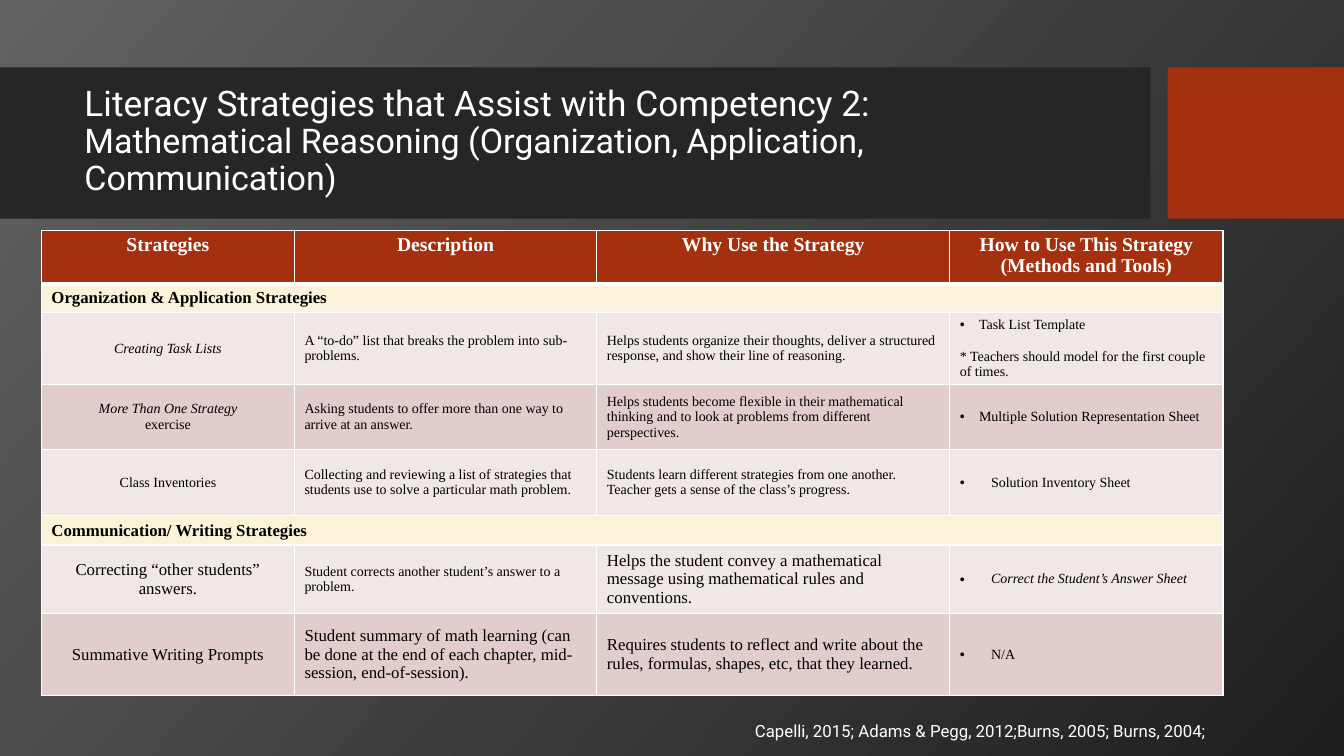
from dataclasses import dataclass

from lxml.etree import SubElement
from pptx import Presentation
from pptx.dml.color import RGBColor
from pptx.enum.shapes import MSO_SHAPE as Shape
from pptx.enum.text import MSO_ANCHOR as Anchor, PP_ALIGN as Align
from pptx.oxml.ns import qn
from pptx.util import Emu, Inches, Pt

BACKDROP_LIGHT = RGBColor(0x62, 0x62, 0x62)
BACKDROP_DARK = RGBColor(0x1F, 0x1F, 0x1F)
BAND = RGBColor(0x26, 0x26, 0x26)
RUST = RGBColor(0xA5, 0x30, 0x0F)
CREAM = RGBColor(0xFA, 0xF3, 0xD9)
PALE = RGBColor(0xF0, 0xE8, 0xE7)
ROSE = RGBColor(0xE1, 0xCD, 0xCC)
WHITE = RGBColor(0xFF, 0xFF, 0xFF)
BLACK = RGBColor(0x00, 0x00, 0x00)

SANS = "Roboto"
SERIF = "Times New Roman"

# Shares of the slide's size, in percent
COLUMN_WIDTHS = (18.83, 22.5, 26.26, 20.33)


@dataclass
class Entry:
    text: str
    size: float = 10
    bold: bool = False
    italic_first: bool = False
    bullet_indent: float = 0


@dataclass
class Row:
    height: float
    fill: RGBColor
    entries: list


HEADER = Row(6.93, RUST, [Entry(text, 14, bold=True) for text in (
    "Strategies", "Description", "Why Use the Strategy",
    "How to Use This Strategy\n(Methods and Tools)")])

ROWS = [
    HEADER,
    Row(3.73, CREAM, [Entry("Organization & Application Strategies", 12, bold=True)]),
    Row(9.33, PALE, [
        Entry("Creating Task Lists", italic_first=True),
        Entry("A “to-do” list that breaks the problem into sub-problems."),
        Entry("Helps students organize their thoughts, deliver a structured "
              "response, and show their line of reasoning."),
        Entry("Task List Template\n* Teachers should model for the first couple of times.",
              bullet_indent=0.19)]),
    Row(8.53, ROSE, [
        Entry("More Than One Strategy\nexercise", italic_first=True),
        Entry("Asking students to offer more than one way to arrive at an answer."),
        Entry("Helps students become flexible in their mathematical thinking and "
              "to look at problems from different perspectives."),
        Entry("Multiple Solution Representation Sheet", bullet_indent=0.19)]),
    Row(8.8, PALE, [
        Entry("Class Inventories"),
        Entry("Collecting and reviewing a list of strategies that students use to "
              "solve a particular math problem."),
        Entry("Students learn different strategies from one another. Teacher gets "
              "a sense of the class’s progress."),
        Entry("Solution Inventory Sheet", bullet_indent=0.31)]),
    Row(3.87, CREAM, [Entry("Communication/ Writing Strategies", 12, bold=True)]),
    Row(9.07, PALE, [
        Entry("Correcting “other students” answers.", 12),
        Entry("Student corrects another student’s answer to a problem."),
        Entry("Helps the student convey a mathematical message using mathematical "
              "rules and conventions.", 12),
        Entry("Correct the Student’s Answer Sheet", italic_first=True,
              bullet_indent=0.31)]),
    Row(10.8, ROSE, [
        Entry("Summative Writing Prompts", 12),
        Entry("Student summary of math learning (can be done at the end of each "
              "chapter, mid-session, end-of-session).", 12),
        Entry("Requires students to reflect and write about the rules, formulas, "
              "shapes, etc, that they learned.", 12),
        Entry("N/A", bullet_indent=0.31)]),
]


class SlideBuilder:
    """Places elements by percent of the slide's width and height."""

    def __init__(self, presentation):
        self.width = presentation.slide_width
        self.height = presentation.slide_height
        self.slide = presentation.slides.add_slide(presentation.slide_layouts[6])

    def across(self, percent):
        return Emu(round(self.width * percent / 100))

    def down(self, percent):
        return Emu(round(self.height * percent / 100))

    def box(self, left, top, width, height):
        return self.across(left), self.down(top), self.across(width), self.down(height)

    def backdrop(self):
        fill = self.slide.background.fill
        fill.gradient()
        fill.gradient_angle = 318
        for stop, color in zip(fill.gradient_stops, (BACKDROP_LIGHT, BACKDROP_DARK)):
            stop.color.rgb = color

    def block(self, place, color):
        shape = self.slide.shapes.add_shape(Shape.RECTANGLE, *self.box(*place))
        shape.shadow.inherit = False
        shape.fill.solid()
        shape.fill.fore_color.rgb = color
        shape.line.fill.background()

    def text(self, place, text, sizes, align=Align.LEFT, anchor=Anchor.TOP, spacing=1.0):
        """Adds one paragraph; each size styles the run of one line."""
        frame = self.slide.shapes.add_textbox(*self.box(*place)).text_frame
        frame.word_wrap = True
        frame.vertical_anchor = anchor
        paragraph = frame.paragraphs[0]
        paragraph.text = text
        paragraph.alignment = align
        paragraph.line_spacing = spacing
        for run, size in zip(paragraph.runs, sizes):
            run.font.name = SANS
            run.font.size = Pt(size)
            run.font.color.rgb = WHITE
        return frame

    def table(self, left, top, rows):
        place = self.box(left, top, sum(COLUMN_WIDTHS), sum(row.height for row in rows))
        table = self.slide.shapes.add_table(len(rows), len(COLUMN_WIDTHS), *place).table
        table.first_row = table.horz_banding = False
        for column, width in zip(table.columns, COLUMN_WIDTHS):
            column.width = self.across(width)
        for index, row in enumerate(rows):
            table.rows[index].height = self.down(row.height)
            cells = list(table.rows[index].cells)
            for cell in cells:
                self.borders(cell, thick_top=index == 1, thick_bottom=index == 0)
                cell.fill.solid()
                cell.fill.fore_color.rgb = row.fill
            section = len(row.entries) == 1
            if section:
                cells[0].merge(cells[-1])
            for number, (cell, entry) in enumerate(zip(cells, row.entries)):
                header = row is HEADER
                centered = header or (number == 0 and not section)
                self.fill_cell(cell, entry, header, centered)

    def borders(self, cell, thick_top, thick_bottom):
        properties = cell._tc.get_or_add_tcPr()
        widths = {"L": 1, "R": 1, "T": 3 if thick_top else 1, "B": 3 if thick_bottom else 1}
        for side, width in widths.items():
            line = SubElement(properties, qn(f"a:ln{side}"), w=str(Pt(width)))
            SubElement(SubElement(line, qn("a:solidFill")), qn("a:srgbClr"), val=str(WHITE))

    def fill_cell(self, cell, entry, header, centered):
        cell.margin_top = cell.margin_bottom = Inches(0.03)
        cell.vertical_anchor = Anchor.TOP if header else Anchor.MIDDLE
        cell.text_frame.text = entry.text
        for number, paragraph in enumerate(cell.text_frame.paragraphs):
            first = number == 0
            if entry.bullet_indent and first:
                self.bullet(paragraph, entry.bullet_indent)
            elif entry.bullet_indent:
                paragraph.space_before = Pt(11.5)
            paragraph.alignment = Align.CENTER if centered else Align.LEFT
            for run in paragraph.runs:
                run.font.name = SERIF
                run.font.size = Pt(entry.size)
                run.font.bold = entry.bold
                run.font.italic = entry.italic_first and first
                run.font.color.rgb = WHITE if header else BLACK

    def bullet(self, paragraph, indent):
        properties = paragraph._p.get_or_add_pPr()
        properties.set("marL", str(Inches(indent)))
        properties.set("indent", str(-Inches(indent)))
        SubElement(properties, qn("a:buFont"), typeface="Arial")
        SubElement(properties, qn("a:buChar"), char="•")


def main():
    presentation = Presentation()
    presentation.slide_width = Inches(13.33)
    presentation.slide_height = Inches(7.5)
    builder = SlideBuilder(presentation)
    builder.backdrop()
    builder.block((0, 8.93, 85.6, 20), BAND)
    builder.block((86.87, 8.93, 13.13, 20), RUST)
    title = builder.text(
        (5.55, 10.93, 78.84, 15.73),
        "Literacy Strategies that Assist with Competency 2:\v"
        "Mathematical Reasoning (Organization, Application, Communication)",
        (25.2, 24.3), anchor=Anchor.MIDDLE, spacing=0.9)
    title.margin_right = Inches(0.3)
    builder.table(3.08, 30.53, ROWS)
    builder.text((51.69, 94.67, 38.78, 4),
                 "Capelli, 2015; Adams & Pegg, 2012;Burns, 2005; Burns, 2004;",
                 (12,), align=Align.RIGHT)
    presentation.save("out.pptx")


if __name__ == "__main__":
    main()
